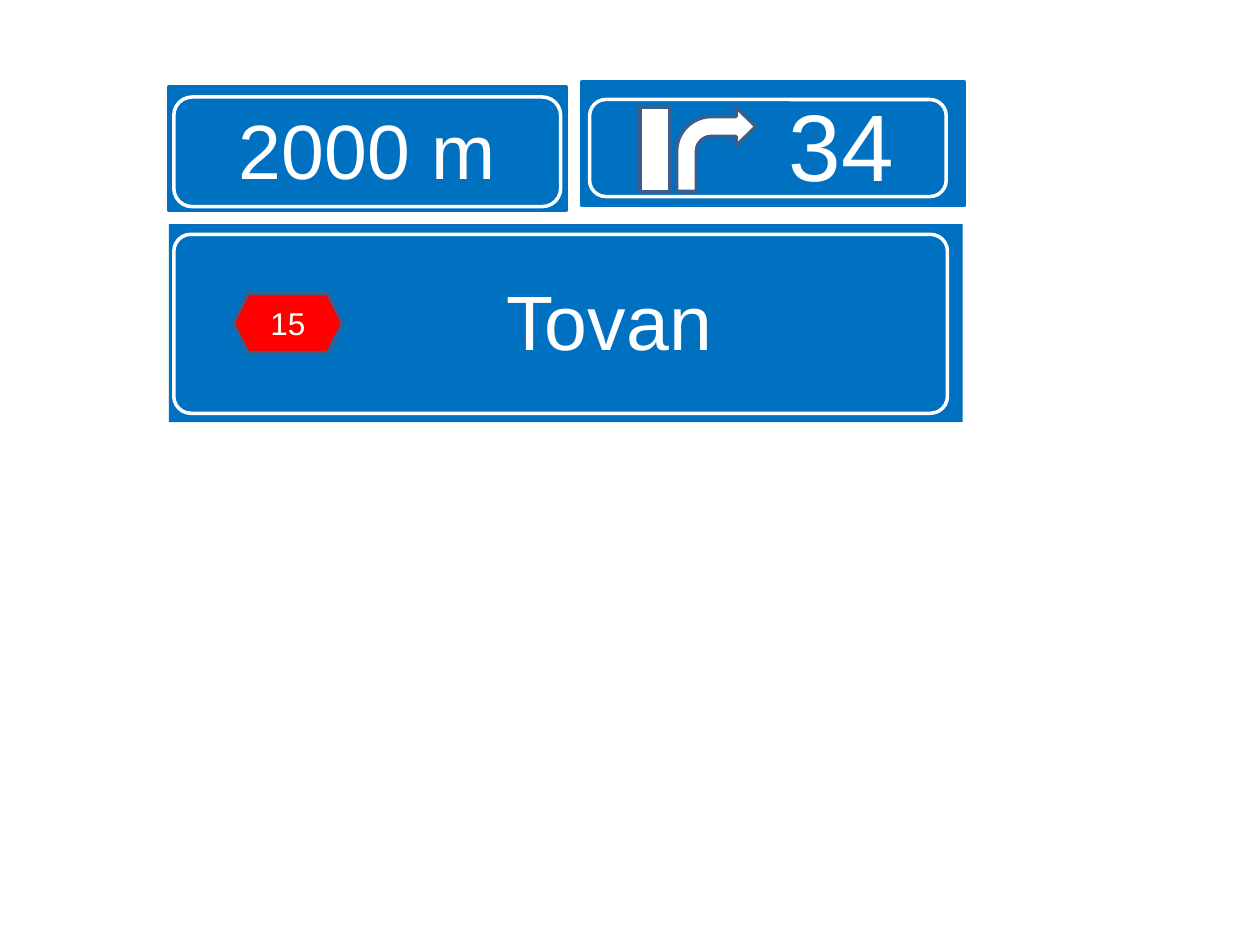
import pptx
import pptx.util
import pptx.dml.color
import pptx.enum.shapes
import pptx.enum.text

Kind = pptx.enum.shapes.MSO_SHAPE
Anchor = pptx.enum.text.MSO_ANCHOR
Align = pptx.enum.text.PP_ALIGN

BLUE, WHITE, RED, EDGE = "0070C0", "FFFFFF", "FF0000", "3A5F8C"
COLS, ROWS = 100, 75


def tint(code):
    return pptx.dml.color.RGBColor.from_string(code)


class Sign:
    def __init__(self, deck, font="Arial", ink=WHITE, width=2):
        self.font, self.ink, self.width = font, ink, width
        self.col = deck.slide_width / COLS
        self.row = deck.slide_height / ROWS
        self.slide = deck.slides.add_slide(deck.slide_layouts[6])

    def shape(self, kind, box, fill=None, line=None, adjust=()):
        x, y, w, h = box
        item = self.slide.shapes.add_shape(
            kind, round(x * self.col), round(y * self.row),
            round(w * self.col), round(h * self.row))
        item.shadow.inherit = False
        for i, value in enumerate(adjust):
            item.adjustments[i] = value
        if fill:
            item.fill.solid()
            item.fill.fore_color.rgb = tint(fill)
        else:
            item.fill.background()
        if line:
            item.line.color.rgb = tint(line)
            item.line.width = pptx.util.Pt(self.width)
        else:
            item.line.fill.background()
        return item

    def panel(self, box):
        return self.shape(Kind.ROUNDED_RECTANGLE, box, BLUE, BLUE, [0])

    def frame(self, box, curve):
        return self.shape(Kind.ROUNDED_RECTANGLE, box, None, WHITE, [curve])

    def label(self, item, text, size, inset=(1, 0.5, 1, 0.5),
              anchor=Anchor.MIDDLE, before=0):
        body = item.text_frame
        body.word_wrap = True
        body.vertical_anchor = anchor
        left, top, right, foot = inset
        body.margin_left = round(left * self.col)
        body.margin_top = round(top * self.row)
        body.margin_right = round(right * self.col)
        body.margin_bottom = round(foot * self.row)
        para = body.paragraphs[0]
        para.alignment = Align.CENTER
        para.space_before = pptx.util.Pt(before)
        run = para.add_run()
        run.text = text
        run.font.name = self.font
        run.font.size = pptx.util.Pt(size)
        run.font.color.rgb = tint(self.ink)


def main():
    deck = pptx.Presentation()
    deck.slide_width = pptx.util.Inches(10)
    deck.slide_height = pptx.util.Inches(7.5)
    sign = Sign(deck)

    sign.label(sign.panel((13.4, 6.9, 31.5, 9.8)), "2000 m", 44)
    sign.label(sign.panel((46.2, 6.5, 30.3, 9.8)), "34", 54,
               inset=(11.8, 0.5, 1, 0.5))
    sign.shape(Kind.RECTANGLE, (50.8, 8.5, 2.4, 6.7), WHITE, EDGE)
    sign.shape(Kind.BENT_ARROW, (53.7, 8.5, 6.3, 6.7), WHITE, EDGE,
               [0.25, 0.245, 0.25, 0.438])

    town = sign.shape(Kind.RECTANGLE, (13.4, 17.8, 63, 15.7), BLUE)
    sign.label(town, "Tovan", 44, inset=(7.9, 3.9, 1, 2.4),
               anchor=Anchor.TOP, before=4)

    sign.frame((13.8, 18.6, 61.4, 14.2), 0.095)
    sign.frame((46.8, 7.9, 28.3, 7.7), 0.167)
    sign.frame((13.8, 7.7, 30.7, 8.7), 0.167)

    road = sign.shape(Kind.HEXAGON, (18.5, 23.3, 8.7, 4.7), RED, EDGE)
    sign.label(road, "15", 18)

    deck.save("out.pptx")


if __name__ == "__main__":
    main()
